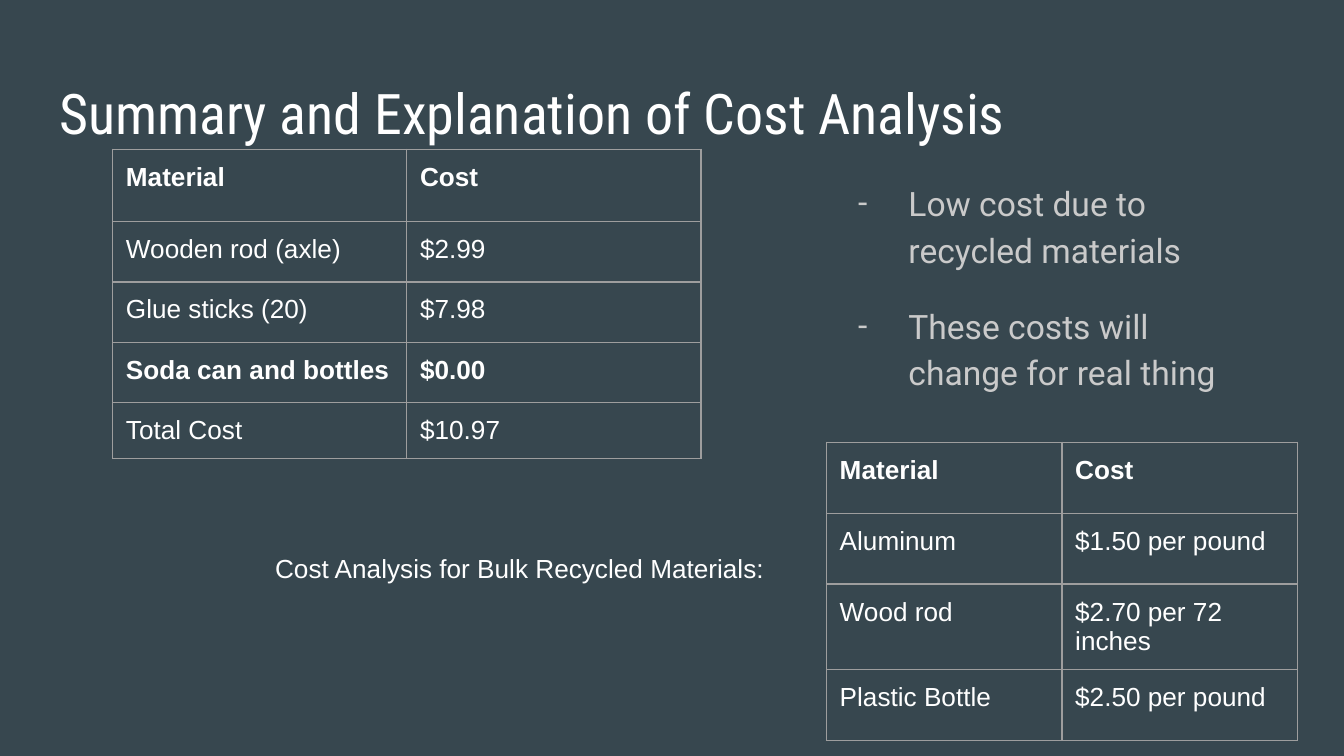
from lxml.etree import SubElement
from pptx import Presentation
from pptx.dml.color import RGBColor
from pptx.enum.text import MSO_ANCHOR, MSO_AUTO_SIZE, PP_ALIGN
from pptx.oxml.ns import qn
from pptx.util import Cm, Pt

# Content
TITLE = "Summary and Explanation of Cost Analysis"
CAPTION = "Cost Analysis for Bulk Recycled Materials:"
NOTES = ["Low cost due to recycled materials", "These costs will change for real thing"]
MODEL_COSTS = [
    ("Material", "Cost"),
    ("Wooden rod (axle)", "$2.99"),
    ("Glue sticks (20)", "$7.98"),
    ("Soda can and bottles", "$0.00"),
    ("Total Cost", "$10.97"),
]
BULK_COSTS = [
    ("Material", "Cost"),
    ("Aluminum", "$1.50 per pound"),
    ("Wood rod", "$2.70 per 72 inches"),
    ("Plastic Bottle", "$2.50 per pound"),
]

THEME = {
    "background": "37474F", "text": "FFFFFF", "muted": "CACACA", "border": "9E9E9E",
    "title_font": "Roboto Condensed", "notes_font": "Roboto", "font": "Arial",
    "title_size": 30, "notes_size": 18, "size": 14, "border_width": 0.75,
}
INSET = Cm(0.25)


def write(frame, *lines, font=THEME["font"], size=THEME["size"], color=THEME["text"],
          bold=False, bullet=None):
    """Fill a text frame with one paragraph per line."""
    frame.word_wrap = True
    frame.auto_size = MSO_AUTO_SIZE.NONE
    frame.vertical_anchor = MSO_ANCHOR.TOP
    frame.margin_left = frame.margin_right = INSET
    frame.margin_top = frame.margin_bottom = INSET
    for index, line in enumerate(lines):
        para = frame.add_paragraph() if index else frame.paragraphs[0]
        para.alignment = PP_ALIGN.LEFT
        span = para.add_run()
        span.text = line
        span.font.name, span.font.size, span.font.bold = font, Pt(size), bold
        span.font.color.rgb = RGBColor.from_string(color)
        if bullet:
            para.line_spacing, para.space_after = 1.15, Pt(16)
            add_bullet(para, bullet, color, font)


def add_bullet(para, symbol, color, font):
    properties = para._p.get_or_add_pPr()
    properties.set("marL", str(Cm(1.27)))
    properties.set("indent", str(-Cm(0.95)))
    tint = SubElement(properties, qn("a:buClr"))
    SubElement(tint, qn("a:srgbClr"), val=color)
    SubElement(properties, qn("a:buFont"), typeface=font)
    SubElement(properties, qn("a:buChar"), char=symbol)


def add_borders(cell):
    properties = cell._tc.get_or_add_tcPr()
    for index, side in enumerate(("lnL", "lnR", "lnT", "lnB")):
        line = SubElement(properties, qn(f"a:{side}"), w=str(Pt(THEME["border_width"])))
        fill = SubElement(line, qn("a:solidFill"))
        SubElement(fill, qn("a:srgbClr"), val=THEME["border"])
        properties.insert(index, line)


def add_cost_table(page, rows, left, top, column_width, heights, bold_rows):
    table = page.shapes.add_table(len(rows), 2, left, top,
                                  column_width * 2, sum(heights)).table
    table.first_row = table.horz_banding = False
    for column in table.columns:
        column.width = column_width
    for r, values in enumerate(rows):
        table.rows[r].height = heights[r]
        for c, value in enumerate(values):
            cell = table.cell(r, c)
            cell.margin_left = cell.margin_right = INSET
            cell.margin_top = cell.margin_bottom = INSET
            cell.vertical_anchor = MSO_ANCHOR.TOP
            para = cell.text_frame.paragraphs[0]
            span = para.add_run()
            span.text = value
            span.font.name, span.font.size = THEME["font"], Pt(THEME["size"])
            span.font.bold = r in bold_rows
            span.font.color.rgb = RGBColor.from_string(THEME["text"])
            cell.fill.background()
            add_borders(cell)


def main():
    deck = Presentation()
    deck.slide_width, deck.slide_height = Cm(25.4), Cm(14.29)
    page = deck.slides.add_slide(deck.slide_layouts[5])
    page.background.fill.solid()
    page.background.fill.fore_color.rgb = RGBColor.from_string(THEME["background"])

    # Title
    title = page.shapes.title
    title.left, title.top, title.width, title.height = Cm(0.87), Cm(1.24), Cm(23.67), Cm(1.6)
    write(title.text_frame, TITLE, font=THEME["title_font"], size=THEME["title_size"])

    # Costs of the model
    add_cost_table(page, MODEL_COSTS, Cm(2.13), Cm(2.82), Cm(5.56),
                   [Cm(1.37)] + [Cm(1.14)] * 3 + [Cm(1.06)], bold_rows=(0, 3))

    # Explanation
    box = page.shapes.add_textbox(Cm(15.65), Cm(3.1), Cm(8.23), Cm(6.78))
    write(box.text_frame, *NOTES, font=THEME["notes_font"], size=THEME["notes_size"],
          color=THEME["muted"], bullet="-")

    # Bulk costs and their caption
    box = page.shapes.add_textbox(Cm(4.95), Cm(10.19), Cm(9.98), Cm(1.17))
    write(box.text_frame, CAPTION)
    add_cost_table(page, BULK_COSTS, Cm(15.62), Cm(8.36), Cm(4.45),
                   [Cm(1.34)] * len(BULK_COSTS), bold_rows=(0,))

    deck.save("out.pptx")


if __name__ == "__main__":
    main()
